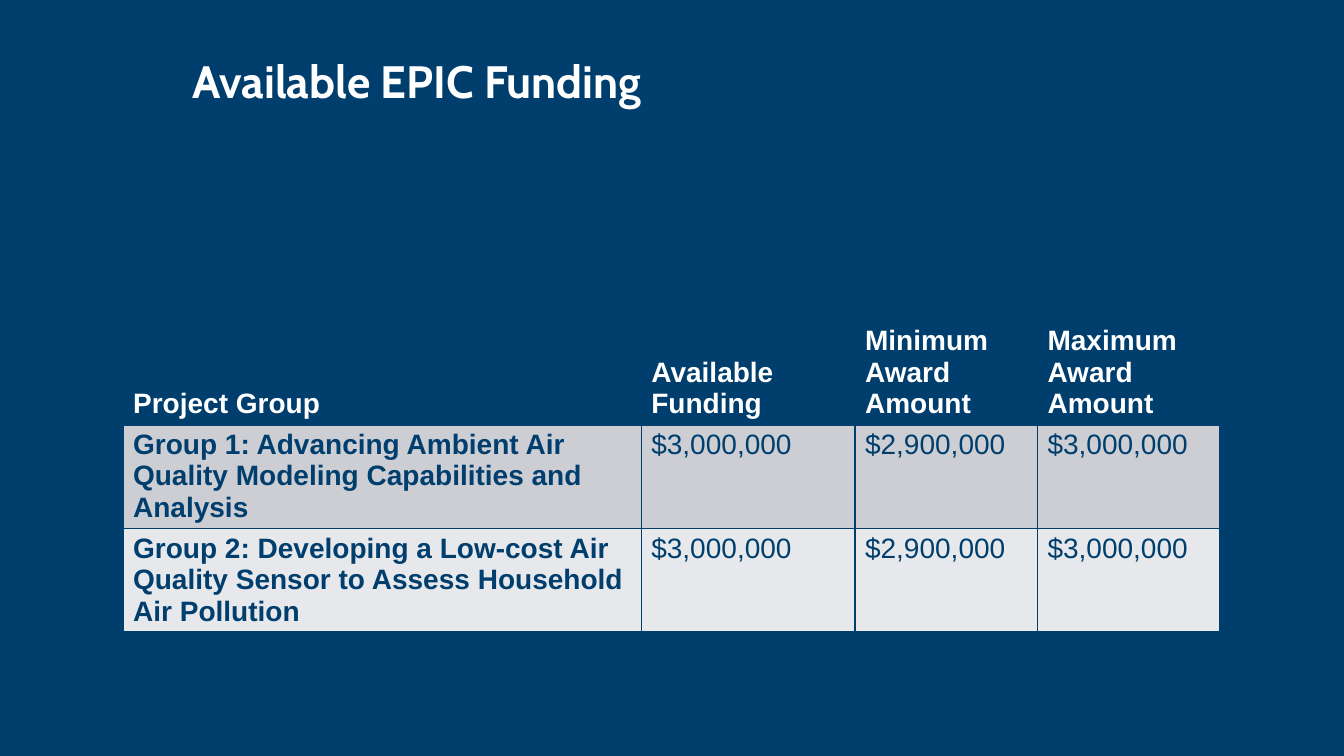
import pptx
import pptx.util
import pptx.oxml
import pptx.oxml.ns
from dataclasses import dataclass
from pptx.dml.color import RGBColor
from pptx.enum.text import MSO_ANCHOR, PP_ALIGN
from pptx.util import Inches


@dataclass(frozen=True)
class Theme:
    navy: str = "003E6D"
    white: str = "FFFFFF"
    bands: tuple = ("CCCED4", "E7E8EB")
    title_font: str = "Cabin"
    body_font: str = "Arial"
    title_size: float = 32.4
    body_size: float = 20


T = Theme()


def add_run(p, text, font, size, color, bold):
    r = p.add_run()
    r.text = text
    r.font.name = font
    r.font.size = pptx.util.Pt(size)
    r.font.bold = bold
    r.font.color.rgb = RGBColor.from_string(color)


def set_border(cell, side, width, color):
    tcPr = cell._tc.get_or_add_tcPr()
    tcPr.append(pptx.oxml.parse_xml(
        f'<a:ln{side} {pptx.oxml.ns.nsdecls("a")} w="{pptx.util.Pt(width)}">'
        f'<a:solidFill><a:srgbClr val="{color}"/></a:solidFill></a:ln{side}>'))


prs = pptx.Presentation()
prs.slide_width, prs.slide_height = Inches(13.33), Inches(7.5)
s = prs.slides.add_slide(prs.slide_layouts[5])
s.background.fill.solid()
s.background.fill.fore_color.rgb = RGBColor.from_string(T.navy)

# Title
title = s.shapes.title
title.left, title.top = Inches(1.81), Inches(0.47)
title.width, title.height = Inches(10.02), Inches(0.61)
tf = title.text_frame
tf.word_wrap = True
tf.vertical_anchor = MSO_ANCHOR.MIDDLE
tf.margin_top, tf.margin_bottom = Inches(0.3), Inches(0.1)
p = tf.paragraphs[0]
p.alignment = PP_ALIGN.LEFT
p.line_spacing = 0.6
add_run(p, "Available EPIC Funding", T.title_font, T.title_size, T.white, True)

# Funding table
rows = [
    ("Project Group", "Available Funding", "Minimum Award Amount", "Maximum Award Amount"),
    ("Group 1: Advancing Ambient Air Quality Modeling Capabilities and Analysis",
     "$3,000,000", "$2,900,000", "$3,000,000"),
    ("Group 2: Developing a Low-cost Air Quality Sensor to Assess Household Air Pollution",
     "$3,000,000", "$2,900,000", "$3,000,000"),
]
col_widths = (5.14, 2.12, 1.81, 1.81)
row_heights = (1.24, 1.02, 1.02)
table = s.shapes.add_table(
    len(rows), len(col_widths), Inches(1.22), Inches(2.97),
    Inches(sum(col_widths)), Inches(sum(row_heights))).table
for col, width in zip(table.columns, col_widths):
    col.width = Inches(width)

for i, row in enumerate(rows):
    table.rows[i].height = Inches(row_heights[i])
    header = i == 0
    fill = T.navy if header else T.bands[i - 1]
    for j, text in enumerate(row):
        cell = table.cell(i, j)
        cell.vertical_anchor = MSO_ANCHOR.BOTTOM if header else MSO_ANCHOR.TOP
        # Borders come before the fill in the cell properties
        for side in "LRTB":
            thick = (header and side == "B") or (i == 1 and side == "T")
            set_border(cell, side, 3 if thick else 1, T.navy)
        cell.fill.solid()
        cell.fill.fore_color.rgb = RGBColor.from_string(fill)
        add_run(cell.text_frame.paragraphs[0], text, T.body_font, T.body_size,
                T.white if header else T.navy, header or j == 0)

prs.save("out.pptx")
